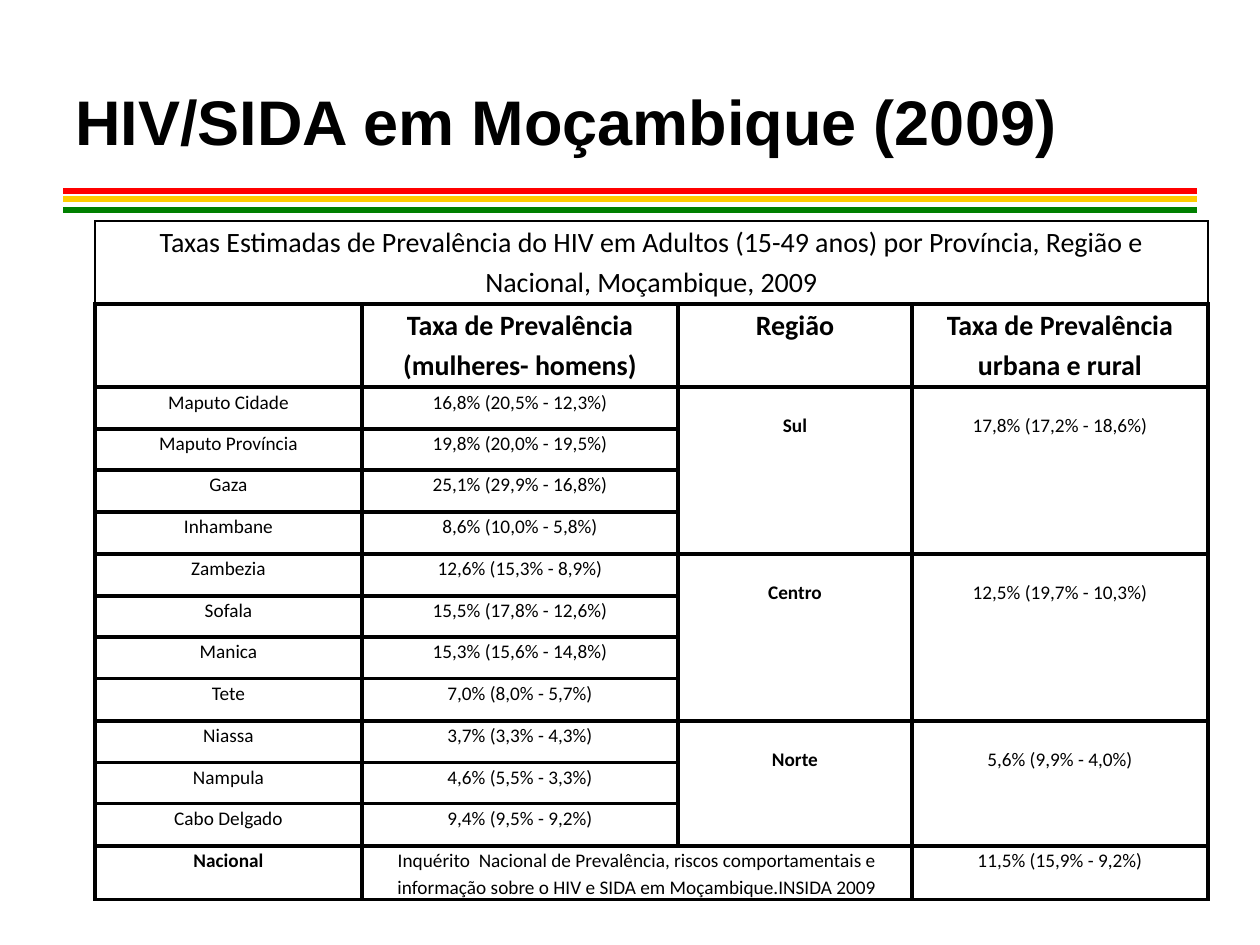
from lxml.etree import SubElement
from pptx import Presentation
from pptx.dml.color import RGBColor
from pptx.enum.shapes import MSO_CONNECTOR as Conn
from pptx.enum.text import MSO_ANCHOR as Anchor, PP_ALIGN as Align
from pptx.oxml.ns import qn
from pptx.util import Emu, Pt

SCALE = 914400 / 126
INK = {"black": "000000", "white": "FFFFFF", "red": "FF0000",
       "gold": "FFCC00", "green": "008000"}

TITLE = "HIV/SIDA em Moçambique (2009)"
CAPTION = ("Taxas Estimadas de Prevalência do HIV em Adultos (15-49 anos) "
           "por Província, Região e Nacional, Moçambique, 2009")
HEADS = ["", "Taxa de Prevalência (mulheres- homens)", "Região",
         "Taxa de Prevalência urbana e rural"]
REGIONS = [
    ("Sul", "17,8% (17,2% - 18,6%)", [
        ("Maputo Cidade", "16,8% (20,5% - 12,3%)"),
        ("Maputo Província", "19,8% (20,0% - 19,5%)"),
        ("Gaza", "25,1% (29,9% - 16,8%)"),
        ("Inhambane", "8,6% (10,0% - 5,8%)")]),
    ("Centro", "12,5% (19,7% - 10,3%)", [
        ("Zambezia", "12,6% (15,3% - 8,9%)"),
        ("Sofala", "15,5% (17,8% - 12,6%)"),
        ("Manica", "15,3% (15,6% - 14,8%)"),
        ("Tete", "7,0% (8,0% - 5,7%)")]),
    ("Norte", "5,6% (9,9% - 4,0%)", [
        ("Niassa", "3,7% (3,3% - 4,3%)"),
        ("Nampula", "4,6% (5,5% - 3,3%)"),
        ("Cabo Delgado", "9,4% (9,5% - 9,2%)")]),
]
SOURCE = ("Inquérito  Nacional de Prevalência, riscos comportamentais e "
          "informação sobre o HIV e SIDA em Moçambique.INSIDA 2009")
TOTAL = "11,5% (15,9% - 9,2%)"

COLS = [267, 316, 234, 296]
HEAD, BODY, FOOT = 83, 459, 54
COUNT = sum(len(rates) for _, _, rates in REGIONS)


def px(n):
    return Emu(round(n * SCALE))


def color(name):
    return RGBColor.from_string(INK[name])


def add_run(para, text, face, size, bold=False):
    run = para.add_run()
    run.text = text
    font = run.font
    font.name, font.size, font.bold = face, Pt(size), bold
    font.color.rgb = color("black")


def add_title(slide):
    box = slide.shapes.add_textbox(px(63), px(42), px(1040), px(157))
    frame = box.text_frame
    frame.word_wrap = True
    frame.vertical_anchor = Anchor.MIDDLE
    add_run(frame.paragraphs[0], TITLE, "Arial", 36, True)


def add_rule(slide, y, name):
    rule = slide.shapes.add_connector(
        Conn.STRAIGHT, px(63), px(y), px(1197), px(y))
    rule.line.color.rgb = color(name)
    rule.line.width = Pt(3)
    SubElement(rule._element.spPr, qn("a:effectLst"))


def set_edge(cell, side, width):
    props = cell._tc.get_or_add_tcPr()
    edge = SubElement(props, qn("a:ln" + side), w=str(Pt(width)))
    fill = SubElement(edge, qn("a:solidFill"))
    SubElement(fill, qn("a:srgbClr"), val=INK["black"])


def set_cell(cell, text, size=11, bold=False, top=0):
    cell.margin_left = cell.margin_right = px(9)
    cell.margin_top, cell.margin_bottom = px(top), 0
    para = cell.text_frame.paragraphs[0]
    para.alignment = Align.CENTER
    para.line_spacing = 1.15
    if text:
        add_run(para, text, "Calibri", size, bold)


def frame_cells(table, ends):
    """Border and fill each cell, heavier where a region ends."""
    def weight(row):
        return 1 if row == 0 else 2.5 if row in ends else 2.25

    for row in range(len(table.rows)):
        side = 1 if row == 0 else 2.25
        for col in range(len(COLS)):
            cell = table.cell(row, col)
            below = row + (cell.span_height if cell.is_merge_origin else 1)
            for name, width in (("L", side), ("R", side),
                                ("T", weight(row)), ("B", weight(below))):
                set_edge(cell, name, width)
            cell.fill.solid()
            cell.fill.fore_color.rgb = color("white")


def add_rates(slide):
    steps = [round(BODY * i / COUNT) for i in range(COUNT + 1)]
    body = [b - a for a, b in zip(steps, steps[1:])]
    rows = [HEAD, HEAD, *body, FOOT]
    table = slide.shapes.add_table(
        len(rows), len(COLS), px(95), px(221),
        px(sum(COLS)), px(sum(rows))).table
    table.first_row = table.horz_banding = False
    for col, width in zip(table.columns, COLS):
        col.width = px(width)
    for row, height in zip(table.rows, rows):
        row.height = px(height)

    table.cell(0, 0).merge(table.cell(0, 3))
    set_cell(table.cell(0, 0), CAPTION, 16)
    for col, text in enumerate(HEADS):
        set_cell(table.cell(1, col), text, 16, True)

    row, ends = 2, set()
    for region, rate, places in REGIONS:
        end = row + len(places)
        for col, text in ((2, region), (3, rate)):
            table.cell(row, col).merge(table.cell(end - 1, col))
            set_cell(table.cell(row, col), text, bold=col == 2, top=24)
        for at, place in enumerate(places, row):
            for col, text in enumerate(place):
                set_cell(table.cell(at, col), text)
        row = end
        ends.add(end)

    table.cell(row, 1).merge(table.cell(row, 2))
    set_cell(table.cell(row, 0), "Nacional", bold=True)
    set_cell(table.cell(row, 1), SOURCE)
    set_cell(table.cell(row, 3), TOTAL)
    frame_cells(table, ends)


def main():
    deck = Presentation()
    deck.slide_width, deck.slide_height = px(1260), px(945)
    slide = deck.slides.add_slide(deck.slide_layouts[6])
    for y, name in ((199, "gold"), (191, "red"), (210, "green")):
        add_rule(slide, y, name)
    add_title(slide)
    add_rates(slide)
    deck.save("out.pptx")


if __name__ == "__main__":
    main()
